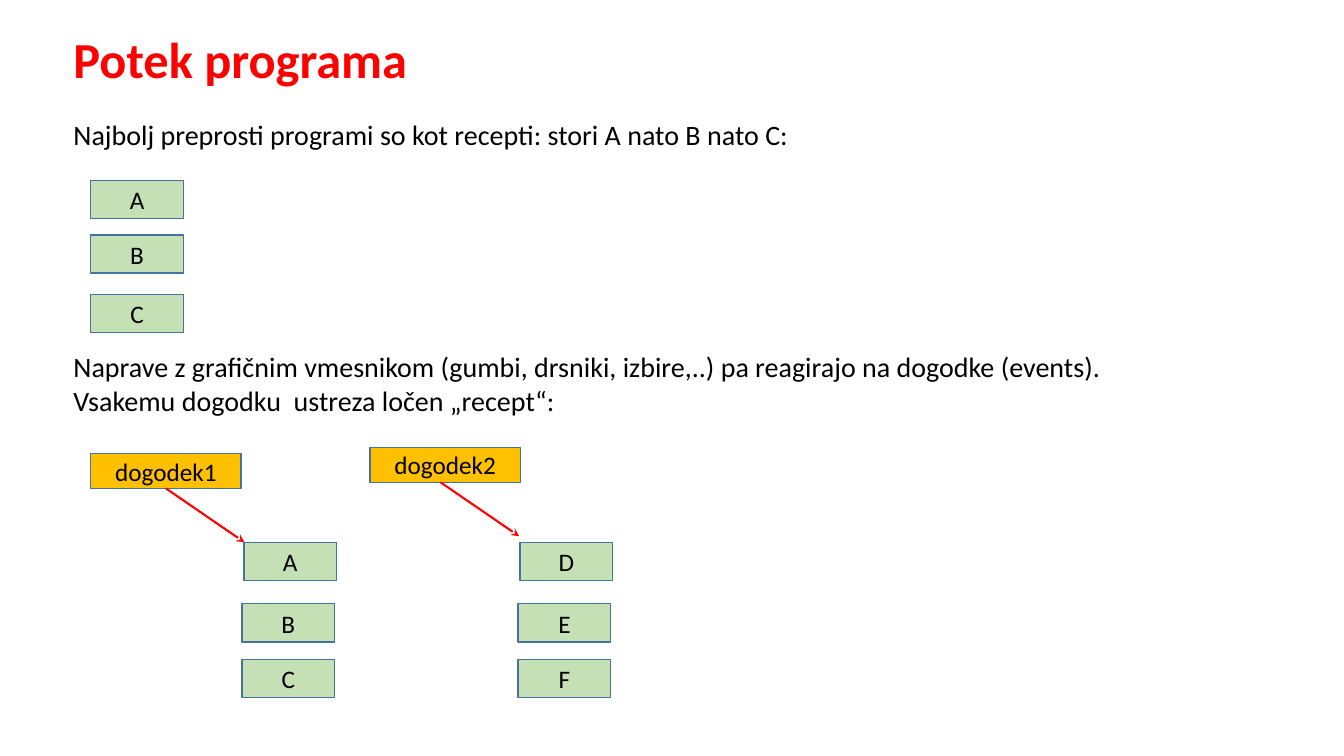
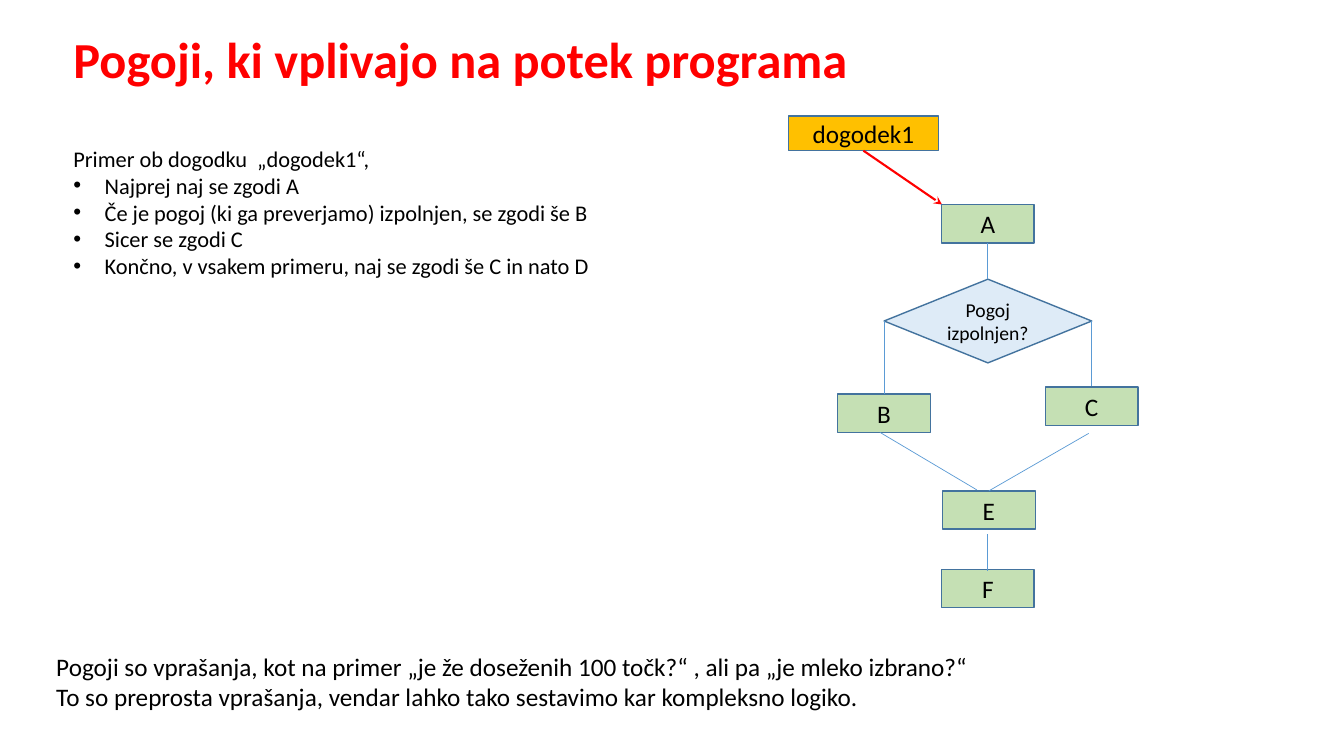
from lxml import etree
from pptx import Presentation
from pptx.dml.color import RGBColor
from pptx.enum.shapes import MSO_CONNECTOR, MSO_SHAPE
from pptx.enum.text import MSO_ANCHOR, PP_ALIGN
from pptx.oxml.ns import qn
from pptx.util import Inches, Pt

# Grid: 100 columns by 100 rows over the slide
SLIDE_W, SLIDE_H = Inches(13.33), Inches(7.5)
COL, ROW = SLIDE_W / 100, SLIDE_H / 100

# Shared style
FONT = "Calibri"
RED = RGBColor(0xFF, 0x00, 0x00)
BLACK = RGBColor(0x00, 0x00, 0x00)
GREEN = RGBColor(0xC5, 0xE0, 0xB4)
AMBER = RGBColor(0xFF, 0xC0, 0x00)
PALE_BLUE = RGBColor(0xDE, 0xEB, 0xF7)
OUTLINE = RGBColor(0x43, 0x73, 0x9E)
FLOW_BLUE = RGBColor(0x5B, 0x9B, 0xD5)

RECT = MSO_SHAPE.RECTANGLE
DECISION = MSO_SHAPE.FLOWCHART_DECISION
STRAIGHT = MSO_CONNECTOR.STRAIGHT
CENTER = PP_ALIGN.CENTER
MIDDLE = MSO_ANCHOR.MIDDLE

MARGIN = 4.73
STEP_W, STEP_H = 6.9, 5.07
EVENT_W, EVENT_H = 11.18, 4.6
ARROW_W, ARROW_H = 5.85, 7.13
BULLET_INDENT = Inches(0.31)


def cell(left, top, width, height):
    """Turn grid units into lengths."""
    return int(left * COL), int(top * ROW), int(width * COL), int(height * ROW)


def style_runs(paragraph, size, color=BLACK, bold=False):
    for run in paragraph.runs:
        run.font.name = FONT
        run.font.size = Pt(size)
        run.font.bold = bold
        run.font.color.rgb = color


def add_bullet(paragraph):
    properties = paragraph._p.get_or_add_pPr()
    properties.set("marL", str(BULLET_INDENT))
    properties.set("indent", str(-BULLET_INDENT))
    etree.SubElement(properties, qn("a:buFont")).set("typeface", "Arial")
    etree.SubElement(properties, qn("a:buChar")).set("char", "•")


def add_text(slide, area, lines, size, color=BLACK, bold=False,
             spacing=None, anchor=None, bullets_from=None):
    frame = slide.shapes.add_textbox(*cell(*area)).text_frame
    frame.word_wrap = True
    frame.vertical_anchor = anchor
    frame.text = "\n".join(lines)
    for index, paragraph in enumerate(frame.paragraphs):
        paragraph.line_spacing = spacing
        style_runs(paragraph, size, color, bold)
        if bullets_from is not None and index >= bullets_from:
            add_bullet(paragraph)


def add_title(slide, title):
    add_text(slide, (MARGIN, 1.73, 86.25, 12.93), [title], 36, RED, True,
             spacing=0.9, anchor=MIDDLE)


def add_node(slide, area, label, fill, kind=RECT, size=18):
    node = slide.shapes.add_shape(kind, *cell(*area))
    node.shadow.inherit = False
    node.fill.solid()
    node.fill.fore_color.rgb = fill
    node.line.color.rgb = OUTLINE
    node.line.width = Pt(1)
    node.text_frame.text = label
    node.text_frame.vertical_anchor = MIDDLE
    paragraph = node.text_frame.paragraphs[0]
    paragraph.alignment = CENTER
    style_runs(paragraph, size)


def add_step(slide, left, top, label):
    add_node(slide, (left, top, STEP_W, STEP_H), label, GREEN)


def add_line(slide, x1, y1, x2, y2, color=FLOW_BLUE, width=0.5, arrow=False):
    line = slide.shapes.add_connector(STRAIGHT, *cell(x1, y1, x2, y2))
    line.line.color.rgb = color
    line.line.width = Pt(width)
    if arrow:
        etree.SubElement(line.line._get_or_add_ln(), qn("a:tailEnd")).set("type", "stealth")
    etree.SubElement(line._element.spPr, qn("a:effectLst"))


def add_event(slide, left, top, label, arrow_shift=0):
    """An event box with a red arrow leaving its lower edge."""
    add_node(slide, (left, top, EVENT_W, EVENT_H), label, AMBER)
    x, y = left + EVENT_W / 2 + arrow_shift, top + EVENT_H
    add_line(slide, x, y, x + ARROW_W, y + ARROW_H, RED, 1.5, True)


def build_program_flow(slide):
    add_title(slide, "Potek programa")

    # Simple recipe
    add_text(slide, (MARGIN, 15.73, 84.6, 5.2),
             ["Najbolj preprosti programi so kot recepti: stori A nato B nato C:"],
             20, spacing=0.8)
    for label, top in zip("ABC", (23.87, 31.07, 38.93)):
        add_step(slide, 6.75, top, label)

    # One recipe per event
    add_text(slide, (MARGIN, 45.6, 79.6, 10.27),
             ["Naprave z grafičnim vmesnikom (gumbi, drsniki, izbire,..) pa reagirajo "
              "na dogodke (events). Vsakemu dogodku  ustreza ločen „recept“:"], 20)
    add_event(slide, 6.75, 60, "dogodek1")
    add_event(slide, 27.53, 59.2, "dogodek2", arrow_shift=-0.34)
    for left, labels in ((18, "ABC"), (38.55, "DEF")):
        for label, shift, top in zip(labels, (0.15, 0, 0), (71.73, 79.87, 87.2)):
            add_step(slide, left + shift, top, label)


def build_conditions(slide):
    add_title(slide, "Pogoji, ki vplivajo na potek programa")

    # Explanations
    add_text(slide, (MARGIN, 18.53, 50.63, 22.93),
             ["Primer ob dogodku  „dogodek1“,",
              "Najprej naj se zgodi A",
              "Če je pogoj (ki ga preverjamo) izpolnjen, se zgodi še B",
              "Sicer se zgodi C",
              "Končno, v vsakem primeru, naj se zgodi še C in nato D"],
             16, bullets_from=1)
    add_text(slide, (3.45, 85.47, 88.67, 13.47),
             ["Pogoji so vprašanja, kot na primer „je že doseženih 100 točk?“ , "
              "ali pa „je mleko izbrano?“",
              "To so preprosta vprašanja, vendar lahko tako sestavimo kar "
              "kompleksno logiko."], 18)

    # Flowchart nodes
    add_event(slide, 58.65, 15.33, "dogodek1")
    for label, left, top in (("A", 70.05, 27.07), ("B", 62.33, 52.13),
                             ("C", 77.78, 51.2), ("E", 70.13, 64.93),
                             ("F", 70.05, 75.33)):
        add_step(slide, left, top, label)
    add_node(slide, (65.78, 36.93, 15.45, 11.07), "Pogoj izpolnjen?",
             PALE_BLUE, DECISION, 14)

    # Flowchart branches
    middle, yes, no = 73.5, 65.78, 81.23
    for ends in ((middle, 32.13, middle, 36.93),
                 (yes, 42.4, yes, 52.13),
                 (no, 42.4, no, 51.07),
                 (65.48, 57.2, 72.68, 64.8),
                 (81, 57.33, 73.58, 64.93),
                 (middle, 70.67, middle, 75.47)):
        add_line(slide, *ends)


def main():
    deck = Presentation()
    deck.slide_width, deck.slide_height = SLIDE_W, SLIDE_H
    blank = deck.slide_layouts[6]
    for build in (build_program_flow, build_conditions):
        build(deck.slides.add_slide(blank))
    deck.save("out.pptx")


if __name__ == "__main__":
    main()
